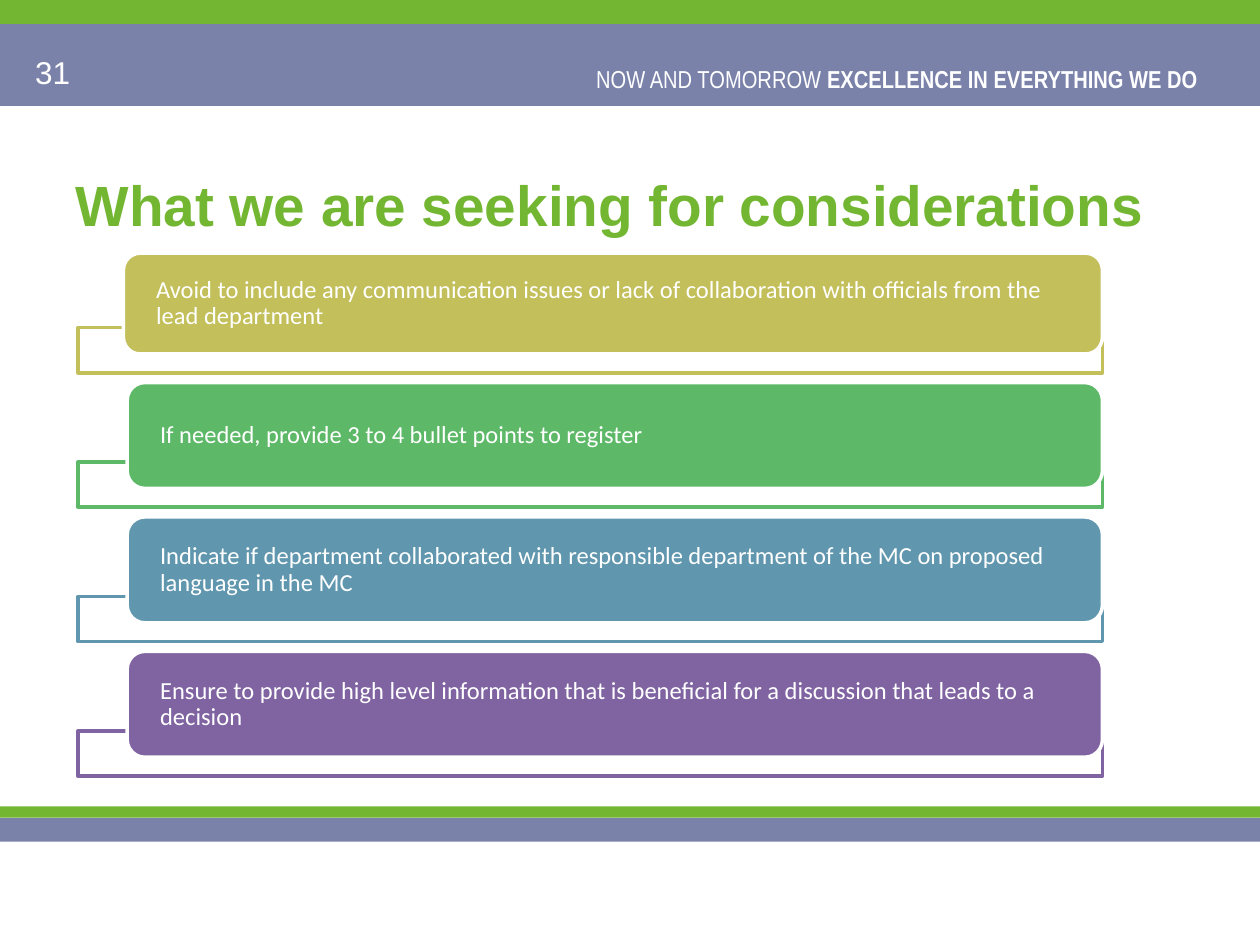
from pptx import Presentation
from pptx.dml.color import RGBColor
from pptx.enum import shapes, text
from pptx.util import Inches, Pt

WHITE = RGBColor(0xFF, 0xFF, 0xFF)
GREEN = RGBColor(0x73, 0xB6, 0x32)
SLATE = RGBColor(0x7A, 0x82, 0xAA)
OLIVE = RGBColor(0xC3, 0xBF, 0x5A)
EMERALD = RGBColor(0x5D, 0xB9, 0x68)
TEAL = RGBColor(0x60, 0x97, 0xAE)
PURPLE = RGBColor(0x80, 0x64, 0xA2)

TITLE = "What we are seeking for considerations"
PAGE_NUMBER = "31"
MOTTO = [("NOW AND TOMORROW ", False), ("EXCELLENCE IN EVERYTHING WE DO ", True)]
BANDS = [(0.19, 0.65, SLATE), (0, 0.19, GREEN), (6.49, 0.19, SLATE), (6.4, 0.09, GREEN)]

# text, colour, card left, card height
CONSIDERATIONS = [
    ("Avoid to include any communication issues or lack of collaboration "
     "with officials from the lead department", OLIVE, 0.98, 0.8),
    ("If needed, provide 3 to 4 bullet points to register", EMERALD, 1.01, 0.84),
    ("Indicate if department collaborated with responsible department of the MC "
     "on proposed language in the MC", TEAL, 1.01, 0.84),
    ("Ensure to provide high level information that is beneficial for a discussion "
     "that leads to a decision", PURPLE, 1.01, 0.84),
]
SLIDE_WIDTH, SLIDE_HEIGHT = 10, 7.5
FRAME_LEFT, FRAME_RIGHT, FRAME_HEIGHT = 0.62, 8.75, 0.36
FIRST_FRAME_TOP, LAST_FRAME_TOP = 2.6, 5.8
ROW_PITCH = (LAST_FRAME_TOP - FIRST_FRAME_TOP) / (len(CONSIDERATIONS) - 1)
CARD_OVERLAP = 0.21  # how far each card reaches into its frame


def add_block(slide, kind, left, top, width, height, fill, line=None):
    shape = slide.shapes.add_shape(
        kind, Inches(left), Inches(top), Inches(width), Inches(height))
    shape.shadow.inherit = False
    shape.fill.solid()
    shape.fill.fore_color.rgb = fill
    if line is None:
        shape.line.fill.background()
    else:
        shape.line.color.rgb = line
        shape.line.width = Pt(2)
    return shape


def style_font(font, name, size, color, bold=False):
    font.name, font.size, font.bold = name, Pt(size), bold
    font.color.rgb = color


def add_label(slide, left, top, width, height, runs, font_name, size, alignment):
    box = slide.shapes.add_textbox(
        Inches(left), Inches(top), Inches(width), Inches(height))
    box.text_frame.word_wrap = True
    paragraph = box.text_frame.paragraphs[0]
    paragraph.alignment = alignment
    for words, bold in runs:
        run = paragraph.add_run()
        run.text = words
        style_font(run.font, font_name, size, WHITE, bold)


def add_title(slide):
    title = slide.shapes.title
    title.left, title.top = Inches(0.5), Inches(0.99)
    title.width, title.height = Inches(9), Inches(1.25)
    frame = title.text_frame
    frame.text = TITLE
    frame.vertical_anchor = text.MSO_ANCHOR.MIDDLE
    paragraph = frame.paragraphs[0]
    paragraph.alignment = text.PP_ALIGN.LEFT
    style_font(paragraph.runs[0].font, "Arial", 32.4, GREEN, True)


def add_consideration(slide, row, words, color, left, height):
    frame_top = FIRST_FRAME_TOP + row * ROW_PITCH
    add_block(slide, shapes.MSO_SHAPE.RECTANGLE, FRAME_LEFT, frame_top,
              FRAME_RIGHT - FRAME_LEFT, FRAME_HEIGHT, WHITE, color)
    card = add_block(slide, shapes.MSO_SHAPE.ROUNDED_RECTANGLE, left,
                     frame_top + CARD_OVERLAP - height,
                     FRAME_RIGHT - left, height, color, WHITE)
    frame = card.text_frame
    frame.word_wrap = True
    frame.vertical_anchor = text.MSO_ANCHOR.MIDDLE
    frame.margin_left = frame.margin_right = Inches(0.22)
    frame.margin_top = frame.margin_bottom = 0
    frame.text = words
    paragraph = frame.paragraphs[0]
    paragraph.alignment = text.PP_ALIGN.LEFT
    paragraph.line_spacing = 0.9
    style_font(paragraph.runs[0].font, "Calibri", 14, WHITE)


def main():
    presentation = Presentation()
    presentation.slide_width = Inches(SLIDE_WIDTH)
    presentation.slide_height = Inches(SLIDE_HEIGHT)
    slide = presentation.slides.add_slide(presentation.slide_layouts[5])

    for top, height, color in BANDS:
        add_block(slide, shapes.MSO_SHAPE.RECTANGLE, 0, top, SLIDE_WIDTH, height, color)
    add_label(slide, 4.6, 0.46, 5.05, 0.34, MOTTO, "Arial Narrow", 14, text.PP_ALIGN.RIGHT)
    add_label(slide, 0.18, 0.37, 2.33, 0.4, [(PAGE_NUMBER, False)], "Arial", 18,
              text.PP_ALIGN.LEFT)
    add_title(slide)
    for row, consideration in enumerate(CONSIDERATIONS):
        add_consideration(slide, row, *consideration)

    presentation.save("out.pptx")


if __name__ == "__main__":
    main()
